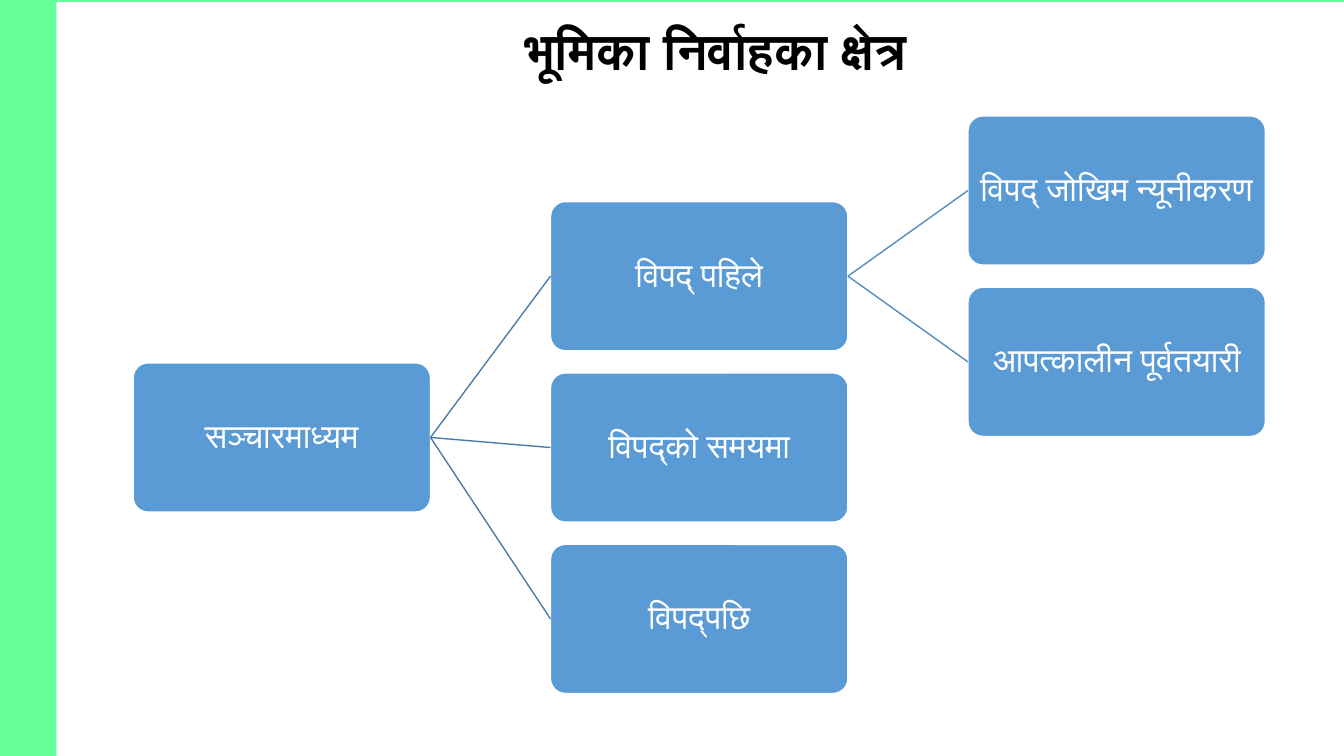
from dataclasses import dataclass

from lxml.etree import SubElement
from pptx import Presentation
from pptx.dml.color import RGBColor
from pptx.enum.shapes import MSO_CONNECTOR, MSO_SHAPE
from pptx.enum.text import MSO_ANCHOR, MSO_AUTO_SIZE, PP_ALIGN
from pptx.oxml.ns import qn
from pptx.util import Inches, Pt


@dataclass(frozen=True)
class Theme:
    band: RGBColor = RGBColor.from_string("66FF99")
    node: RGBColor = RGBColor.from_string("5B9BD5")
    white: RGBColor = RGBColor.from_string("FFFFFF")
    black: RGBColor = RGBColor.from_string("000000")
    links: tuple = (RGBColor.from_string("497CAB"), RGBColor.from_string("538DC1"))
    title_font: str = "Lato"
    node_font: str = "Calibri"
    title_size: Pt = Pt(36)
    node_size: Pt = Pt(24)


@dataclass(frozen=True)
class Box:
    left: float
    top: float
    width: float
    height: float

    def lengths(self):
        return [Inches(n) for n in (self.left, self.top, self.width, self.height)]


@dataclass(frozen=True)
class Node:
    """A tree entry; top is measured from the top of the tree."""
    label: str
    top: float
    children: tuple = ()


THEME = Theme()
NODE_WIDTH, NODE_HEIGHT = 2.95, 1.48
COLUMN_GAP = 1.19

MEDIA_TREE = Node("सञ्चारमाध्यम", 2.45, (
    Node("विपद् पहिले", 0.85, (
        Node("विपद् जोखिम न्यूनीकरण", 0),
        Node("आपत्कालीन पूर्वतयारी", 1.7),
    )),
    Node("विपद्को समयमा", 2.55),
    Node("विपद्पछि", 4.25),
))


def style_text(frame, text, font, size, color, bold=False):
    frame.text = text
    frame.word_wrap = True
    frame.auto_size = MSO_AUTO_SIZE.NONE
    frame.vertical_anchor = MSO_ANCHOR.MIDDLE
    para = frame.paragraphs[0]
    para.alignment = PP_ALIGN.CENTER
    para.line_spacing = 0.9
    para.font.name = font
    para.font.size = size
    para.font.bold = bold
    para.font.color.rgb = color


def add_bands(page, box):
    for band in (Box(box.left, box.top, 0.56, box.height),
                 Box(box.left, box.top, box.width, 0.02)):
        shape = page.shapes.add_shape(MSO_SHAPE.RECTANGLE, *band.lengths())
        shape.shadow.inherit = False
        shape.fill.solid()
        shape.fill.fore_color.rgb = THEME.band
        shape.line.fill.background()


def add_title(page, box):
    title = page.shapes.title
    title.left, title.top, title.width, title.height = box.lengths()
    style_text(title.text_frame, "भूमिका निर्वाहका क्षेत्र", THEME.title_font,
               THEME.title_size, THEME.black, bold=True)


def add_node(page, box, label):
    shape = page.shapes.add_shape(MSO_SHAPE.ROUNDED_RECTANGLE, *box.lengths())
    shape.adjustments[0] = 0.1
    shape.shadow.inherit = False
    shape.fill.solid()
    shape.fill.fore_color.rgb = THEME.node
    shape.line.color.rgb = THEME.white
    shape.line.width = Pt(1)
    frame = shape.text_frame
    frame.margin_left = frame.margin_right = Inches(0.02)
    frame.margin_top = frame.margin_bottom = Inches(0.02)
    style_text(frame, label, THEME.node_font, THEME.node_size, THEME.white)
    return shape


def add_link(page, parent, child, color):
    link = page.shapes.add_connector(MSO_CONNECTOR.STRAIGHT, 0, 0, 0, 0)
    link.begin_connect(parent, 3)
    link.end_connect(child, 1)
    link.line.color.rgb = color
    link.line.width = Pt(1)
    SubElement(link._element.spPr, qn("a:effectLst"))


def add_tree(page, box, node, level=0):
    """Draw the node and its descendants, one column per level."""
    left = box.left + level * (NODE_WIDTH + COLUMN_GAP)
    shape = add_node(page, Box(left, box.top + node.top, NODE_WIDTH, NODE_HEIGHT), node.label)
    for child in node.children:
        child_shape = add_tree(page, box, child, level + 1)
        add_link(page, shape, child_shape, THEME.links[level])
    return shape


def main():
    deck = Presentation()
    deck.slide_width, deck.slide_height = Inches(13.33), Inches(7.5)
    page = deck.slides.add_slide(deck.slide_layouts[5])
    add_bands(page, Box(0, 0, 13.33, 7.5))
    add_title(page, Box(1.77, 0.15, 10.65, 0.75))
    add_tree(page, Box(1.32, 1.15, 11.23, 5.73), MEDIA_TREE)
    deck.save("out.pptx")


if __name__ == "__main__":
    main()
